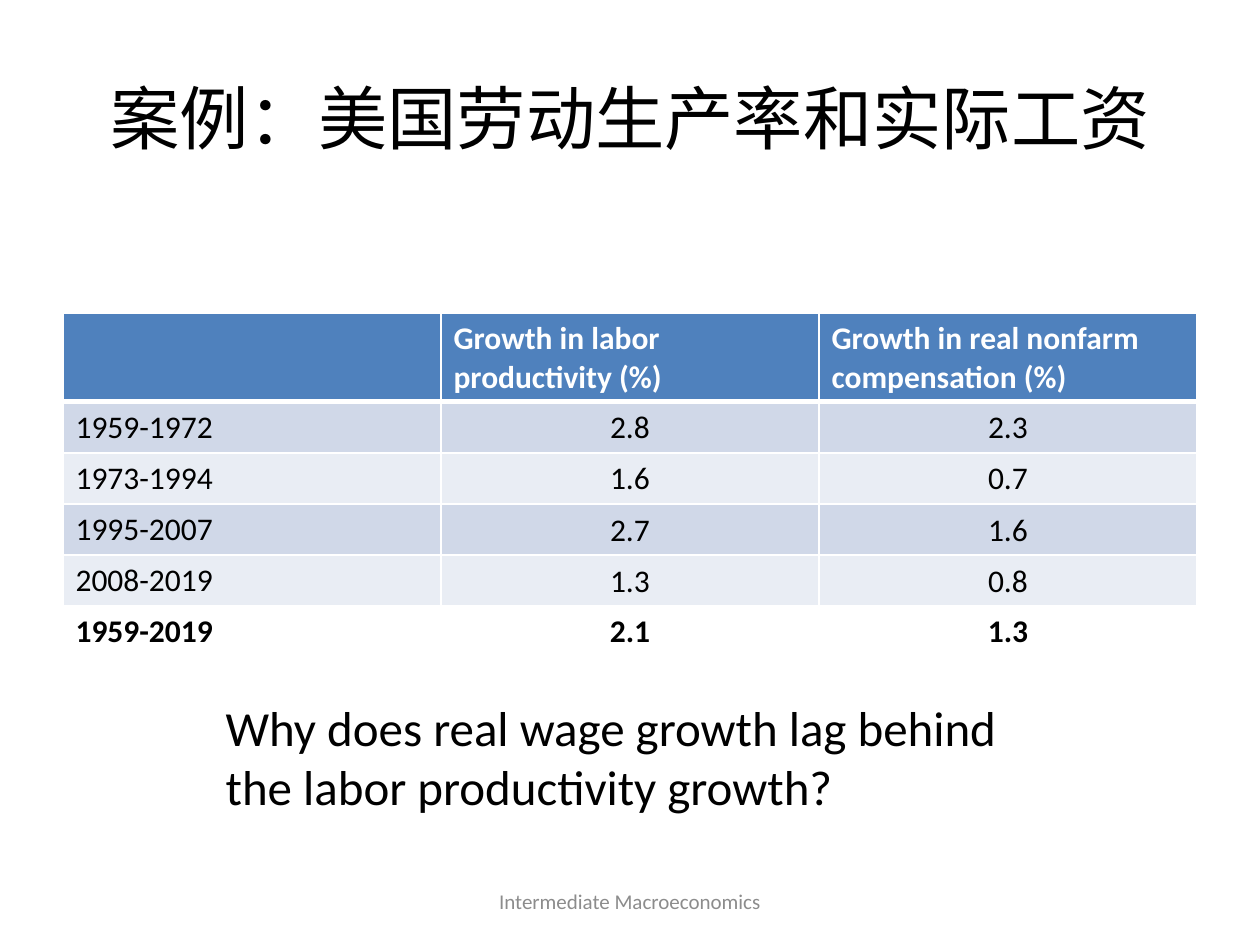
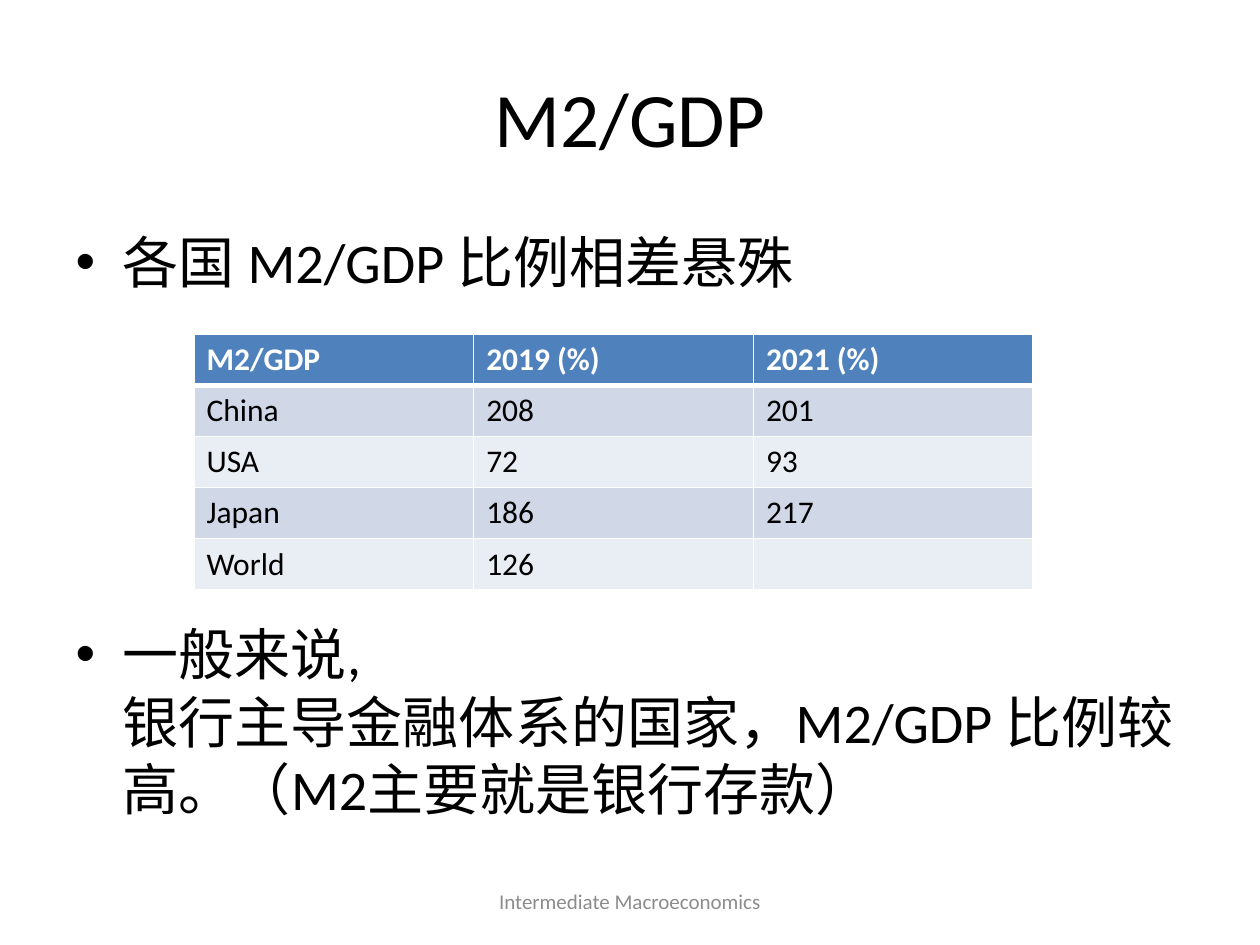
from dataclasses import dataclass

from lxml import etree
from pptx import Presentation
from pptx import util as u
from pptx.dml.color import RGBColor
from pptx.enum import text as t
from pptx.oxml import ns


@dataclass(frozen=True)
class Theme:
    font: str = "Calibri"
    ink: str = "000000"
    paper: str = "FFFFFF"
    header: str = "4F81BD"
    bands: tuple[str, str] = ("D0D8E8", "E9EDF4")
    muted: str = "8C8C8C"
    title_size: float = 44
    long_title_size: float = 39.6
    body_size: float = 32
    question_size: float = 28
    table_size: float = 18
    footer_size: float = 12
    rule: float = 1
    header_rule: float = 3


@dataclass(frozen=True)
class Box:
    """A place on the slide, in centimetres."""
    left: float
    top: float
    width: float
    height: float

    def lengths(self) -> tuple:
        return u.Cm(self.left), u.Cm(self.top), u.Cm(self.width), u.Cm(self.height)


@dataclass(frozen=True)
class DataTable:
    left: float
    top: float
    column_width: float
    header_height: float
    rows: tuple[tuple[str, ...], ...]
    centred_values: bool = False
    total_row: bool = False


THEME = Theme()
ROW_HEIGHT = 1.03
TITLE_BOX = Box(1.27, 0.76, 22.86, 3.18)
BODY_BOX = Box(1.27, 4.45, 22.86, 12.57)
FOOTER_BOX = Box(8.68, 17.66, 8.04, 1.01)
QUESTION_BOX = Box(4.3, 13.93, 16.2, 2.65)
TABLE_GAP = u.Pt(186)

GROWTH = DataTable(1.27, 6.32, 7.62, 1.67, (
    ("", "Growth in labor productivity (%)", "Growth in real nonfarm compensation (%)"),
    ("1959-1972", "2.8", "2.3"),
    ("1973-1994", "1.6", "0.7"),
    ("1995-2007", "2.7", "1.6"),
    ("2008-2019", "1.3", "0.8"),
    ("1959-2019", "2.1", "1.3"),
), centred_values=True, total_row=True)

MONEY = DataTable(3.91, 6.74, 5.64, ROW_HEIGHT, (
    ("M2/GDP", "2019 (%)", "2021 (%)"),
    ("China", "208", "201"),
    ("USA", "72", "93"),
    ("Japan", "186", "217"),
    ("World", "126", ""),
))


def style(paragraph, size: float, color: str = THEME.ink, bold: bool = False) -> None:
    font = paragraph.font
    font.name = THEME.font
    font.size = u.Pt(size)
    font.bold = bold
    font.color.rgb = RGBColor.from_string(color)


def place(shape, box: Box) -> None:
    shape.left, shape.top, shape.width, shape.height = box.lengths()


def add_text(slide, box: Box, text: str, size: float, color: str = THEME.ink):
    frame = slide.shapes.add_textbox(*box.lengths()).text_frame
    frame.word_wrap = True
    frame.text = text
    style(frame.paragraphs[0], size, color)
    return frame


def add_slide(presentation, layout: int, title: str, title_size: float):
    """Add a slide with its title and the shared footer."""
    slide = presentation.slides.add_slide(presentation.slide_layouts[layout])
    heading = slide.shapes.title
    place(heading, TITLE_BOX)
    frame = heading.text_frame
    frame.text = title
    frame.auto_size = t.MSO_AUTO_SIZE.NONE
    frame.vertical_anchor = t.MSO_ANCHOR.MIDDLE
    frame.paragraphs[0].alignment = t.PP_ALIGN.CENTER
    style(frame.paragraphs[0], title_size)

    footer = add_text(slide, FOOTER_BOX, "Intermediate Macroeconomics",
                      THEME.footer_size, THEME.muted)
    footer.vertical_anchor = t.MSO_ANCHOR.MIDDLE
    footer.paragraphs[0].alignment = t.PP_ALIGN.CENTER
    return slide


def set_borders(cell, top: float, bottom: float) -> None:
    properties = cell._tc.get_or_add_tcPr()
    widths = {"lnL": THEME.rule, "lnR": THEME.rule, "lnT": top, "lnB": bottom}
    for side, width in widths.items():
        line = etree.SubElement(properties, ns.qn(f"a:{side}"), w=str(u.Pt(width)))
        fill = etree.SubElement(line, ns.qn("a:solidFill"))
        etree.SubElement(fill, ns.qn("a:srgbClr"), val=THEME.paper)


def add_data_table(slide, data: DataTable) -> None:
    row_count, column_count = len(data.rows), len(data.rows[0])
    height = data.header_height + ROW_HEIGHT * (row_count - 1)
    box = Box(data.left, data.top, data.column_width * column_count, height)
    table = slide.shapes.add_table(row_count, column_count, *box.lengths()).table
    for row, values in enumerate(data.rows):
        is_header = row == 0
        is_total = data.total_row and row == row_count - 1
        table.rows[row].height = u.Cm(data.header_height if is_header else ROW_HEIGHT)
        if is_header:
            fill = THEME.header
        else:
            fill = THEME.paper if is_total else THEME.bands[(row - 1) % 2]
        for column, value in enumerate(values):
            cell = table.cell(row, column)
            set_borders(cell,
                        top=THEME.header_rule if row == 1 else THEME.rule,
                        bottom=THEME.header_rule if is_header else THEME.rule)
            cell.fill.solid()
            cell.fill.fore_color.rgb = RGBColor.from_string(fill)
            cell.text = value
            paragraph = cell.text_frame.paragraphs[0]
            style(paragraph, THEME.table_size, THEME.paper if is_header else THEME.ink,
                  bold=is_header or is_total)
            if data.centred_values and column and not is_header:
                paragraph.alignment = t.PP_ALIGN.CENTER
                if not is_total:
                    cell.vertical_anchor = t.MSO_ANCHOR.MIDDLE
                    cell.margin_left = cell.margin_right = cell.margin_top = u.Cm(0.03)
                    cell.margin_bottom = 0


def add_bullets(slide, items: tuple[str, ...]) -> None:
    """Fill the body with bullets, leaving room for a table between them."""
    body = slide.placeholders[1]
    place(body, BODY_BOX)
    frame = body.text_frame
    frame.text = "\n".join(items)
    frame.auto_size = t.MSO_AUTO_SIZE.NONE
    for paragraph in frame.paragraphs:
        style(paragraph, THEME.body_size)
    for paragraph in frame.paragraphs[1:]:
        paragraph.space_before = TABLE_GAP


def main() -> None:
    presentation = Presentation()
    presentation.slide_width, presentation.slide_height = u.Cm(25.4), u.Cm(19.05)

    wages = add_slide(presentation, 5, "案例：美国劳动生产率和实际工资", THEME.long_title_size)
    add_data_table(wages, GROWTH)
    add_text(wages, QUESTION_BOX,
             "Why does real wage growth lag behind the labor productivity growth?",
             THEME.question_size)

    money = add_slide(presentation, 1, "M2/GDP", THEME.title_size)
    add_bullets(money, (
        "各国 M2/GDP 比例相差悬殊",
        "一般来说, 银行主导金融体系的国家，M2/GDP 比例较高。（M2主要就是银行存款）",
    ))
    add_data_table(money, MONEY)

    presentation.save("out.pptx")


if __name__ == "__main__":
    main()
